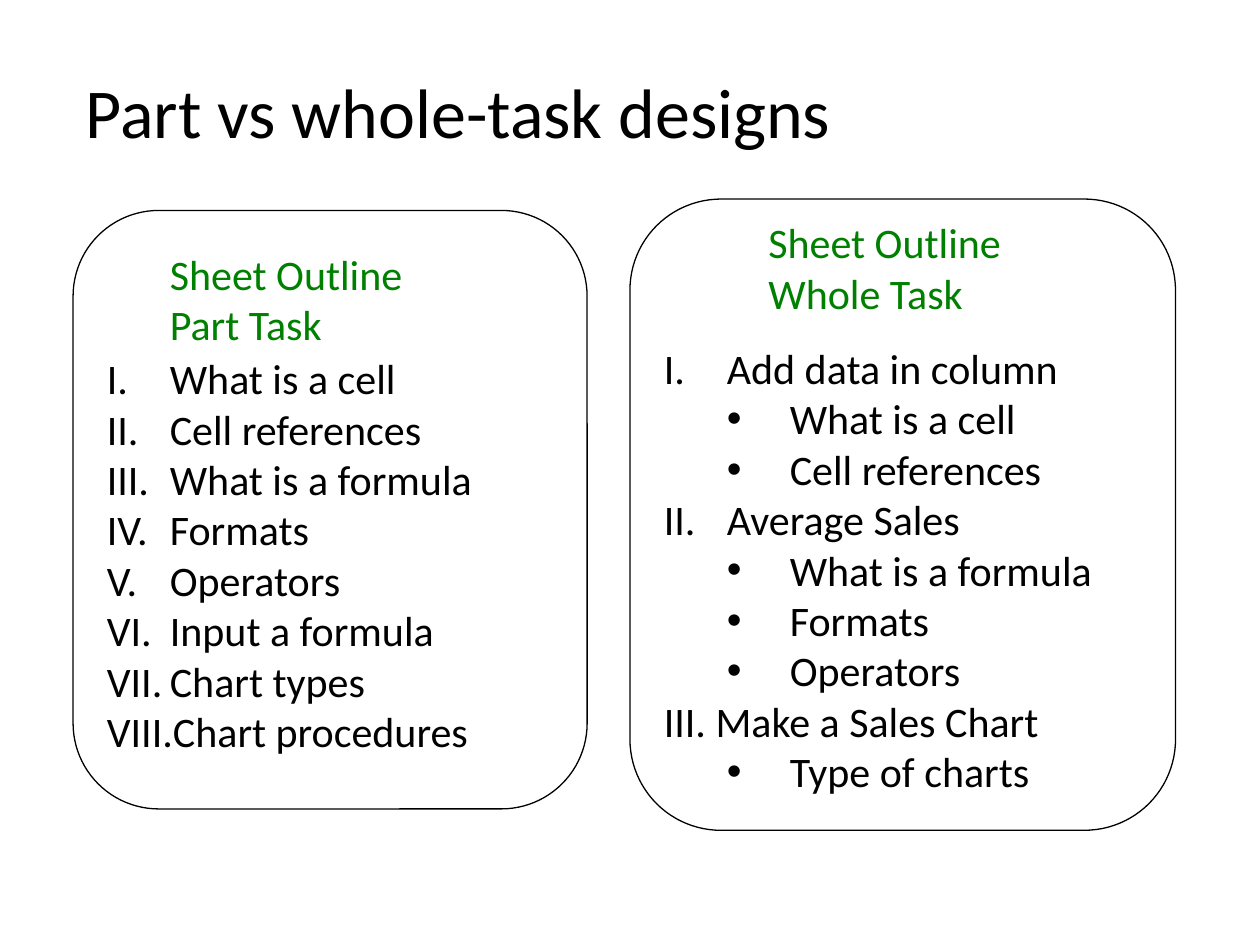
from lxml.etree import SubElement
from pptx import Presentation
from pptx.dml.color import RGBColor
from pptx.enum.shapes import MSO_SHAPE
from pptx.enum.text import MSO_ANCHOR, PP_ALIGN
from pptx.oxml.ns import qn
from pptx.util import Inches, Pt


def style(para, size, color):
    for run in para.runs:
        run.font.name = "Calibri"
        run.font.size = Pt(size)
        run.font.color.rgb = RGBColor.from_string(color)


def add_list(box, items):
    """Fill a text box from (kind, text) pairs; kind is a start number, "•" or None."""
    frame = slide.shapes.add_textbox(*map(Inches, box)).text_frame
    frame.word_wrap = True
    for i, (kind, text) in enumerate(items):
        para = frame.paragraphs[0] if i == 0 else frame.add_paragraph()
        para.text = text
        para.level = 1 if kind == "•" else 0
        props = para._p.get_or_add_pPr()
        props.set("marL", str(Inches(0.5 * (para.level + 1))))
        props.set("indent", str(Inches(-0.5)))
        if kind == "•":
            SubElement(props, qn("a:buFont"), typeface="Arial")
            SubElement(props, qn("a:buChar"), char="•")
        elif kind:
            num = SubElement(props, qn("a:buAutoNum"), type="romanUcPeriod")
            if kind > 1:
                num.set("startAt", str(kind))
        else:
            SubElement(props, qn("a:buNone"))
        style(para, 24, "000000")


deck = Presentation()
deck.slide_width, deck.slide_height = Inches(10), Inches(7.5)
slide = deck.slides.add_slide(deck.slide_layouts[5])

title = slide.shapes.title
title.left, title.top = Inches(0.58), Inches(0.25)
title.width, title.height = Inches(9), Inches(1.25)
title.text_frame.text = "Part vs whole-task designs"
title.text_frame.vertical_anchor = MSO_ANCHOR.MIDDLE
title.text_frame.paragraphs[0].alignment = PP_ALIGN.LEFT
style(title.text_frame.paragraphs[0], 40, "000000")

# Panels
for box in [(5, 1.58, 4.33, 5.01), (0.58, 1.67, 4.08, 4.75)]:
    panel = slide.shapes.add_shape(MSO_SHAPE.ROUNDED_RECTANGLE, *map(Inches, box))
    panel.shadow.inherit = False
    panel.fill.solid()
    panel.fill.fore_color.rgb = RGBColor.from_string("FFFFFF")
    panel.line.color.rgb = RGBColor.from_string("000000")
    panel.line.width = Pt(0.75)

# Panel headings
heads = [
    ((1.25, 1.92, 2.5, 0.91), "Sheet Outline\nPart Task"),
    ((6, 1.67, 2.42, 0.91), "Sheet Outline\nWhole Task"),
]
for box, text in heads:
    frame = slide.shapes.add_textbox(*map(Inches, box)).text_frame
    frame.word_wrap = True
    frame.text = text
    for para in frame.paragraphs:
        style(para, 24, "008000")

# Outlines
parts = ["What is a cell", "Cell references", "What is a formula", "Formats",
         "Operators", "Input a formula", "Chart types", "Chart procedures"]
add_list((0.75, 2.75, 3.6, 3.33), [(1, text) for text in parts])

add_list((5.17, 2.67, 4.02, 3.74), [
    (1, "Add data in column"),
    ("•", "What is a cell"),
    ("•", "Cell references"),
    (2, "Average Sales"),
    ("•", "What is a formula"),
    ("•", "Formats"),
    ("•", "Operators"),
    (None, "III. Make a Sales Chart"),
    ("•", "Type of charts"),
])

deck.save("out.pptx")
